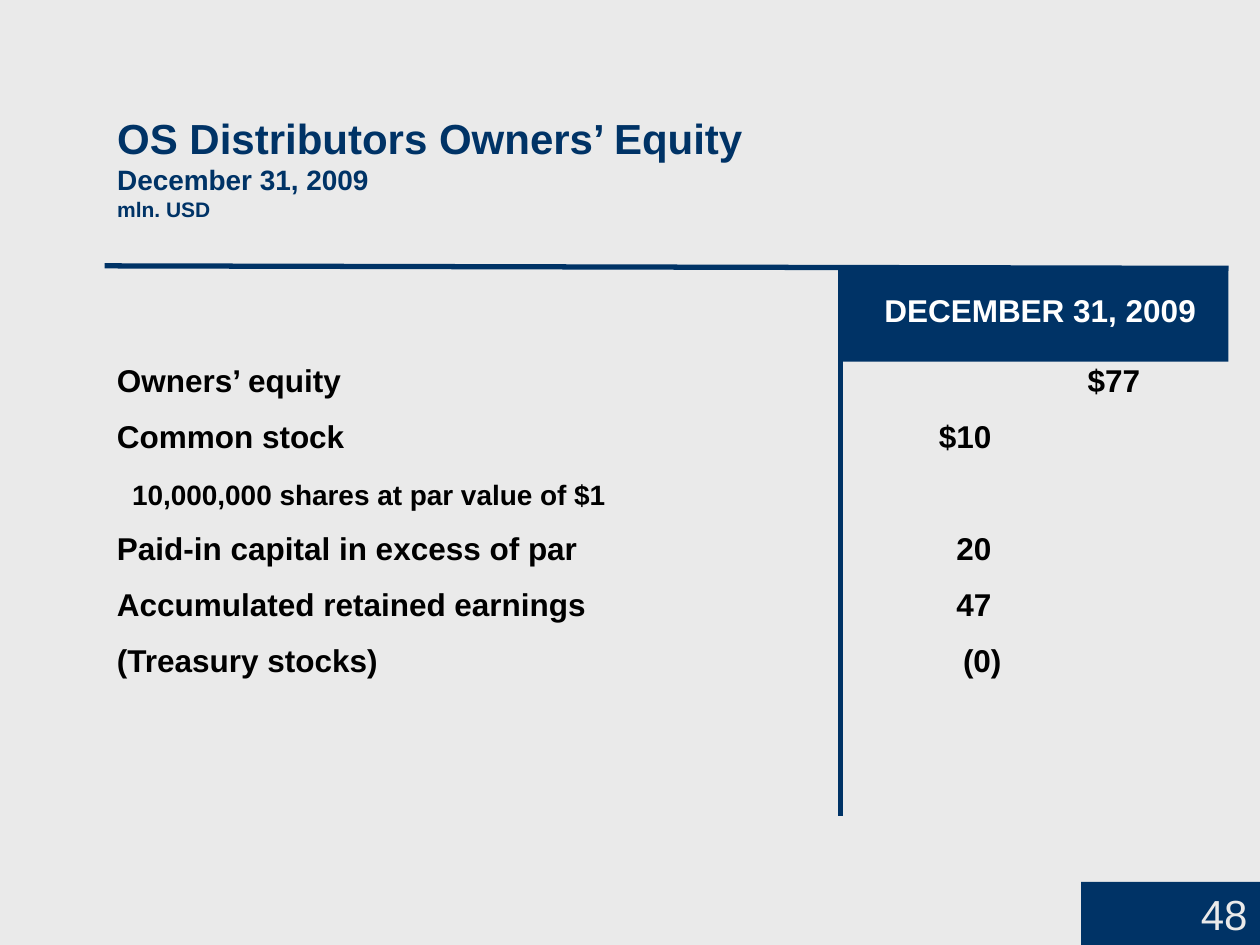
from lxml import etree
from pptx import Presentation
from pptx.dml.color import RGBColor
from pptx.enum.shapes import MSO_CONNECTOR, MSO_SHAPE
from pptx.enum.text import MSO_ANCHOR, MSO_AUTO_SIZE, PP_ALIGN
from pptx.oxml.ns import qn
from pptx.util import Inches, Pt

STRAIGHT = MSO_CONNECTOR.STRAIGHT
RECTANGLE = MSO_SHAPE.RECTANGLE
BOTTOM = MSO_ANCHOR.BOTTOM
LEFT, RIGHT = PP_ALIGN.LEFT, PP_ALIGN.RIGHT
NO_AUTOFIT = MSO_AUTO_SIZE.NONE
NAVY, GREY, BLACK, WHITE = "003366", "EAEAEA", "000000", "FFFFFF"


def color(hex_value):
    return RGBColor.from_string(hex_value)


def add_run(paragraph, text, size, hex_value, bold=True):
    run = paragraph.add_run()
    run.text = text
    run.font.name = "Arial"
    run.font.size = Pt(size)
    run.font.bold = bold
    run.font.color.rgb = color(hex_value)


presentation = Presentation()
presentation.slide_width = Inches(10)
presentation.slide_height = Inches(7.5)
slide = presentation.slides.add_slide(presentation.slide_layouts[5])
slide.background.fill.solid()
slide.background.fill.fore_color.rgb = color(GREY)

# Title with date and unit
title = slide.shapes.title
title.left, title.top = Inches(0.83), Inches(0.83)
title.width, title.height = Inches(8.93), Inches(0.98)
title.text_frame.vertical_anchor = BOTTOM
title.text_frame.auto_size = NO_AUTOFIT
paragraph = title.text_frame.paragraphs[0]
paragraph.alignment = LEFT
add_run(paragraph, "OS Distributors Owners’ Equity", 24, NAVY)
for text, size in [("December 31, 2009", 16), ("mln. USD", 12)]:
    paragraph.add_line_break()
    add_run(paragraph, text, size, NAVY)

# Navy blocks: page number and column header
blocks = []
for left, top, width, height in [(8.58, 7, 1.42, 0.5), (6.67, 2.13, 3.08, 0.74)]:
    block = slide.shapes.add_shape(
        RECTANGLE, Inches(left), Inches(top), Inches(width), Inches(height))
    block.shadow.inherit = False
    block.fill.solid()
    block.fill.fore_color.rgb = color(NAVY)
    block.line.fill.background()
    blocks.append(block)
page_frame = blocks[0].text_frame
page_frame.vertical_anchor = BOTTOM
page_frame.paragraphs[0].alignment = RIGHT
add_run(page_frame.paragraphs[0], "48", 24, GREY, bold=False)

# Statement rows: label, amount, tab position, tab alignment
rows = [
    ("", "DECEMBER 31, 2009", 6.09, "l"),
    ("Owners’ equity", "$77", 8.12, "r"),
    ("Common stock", "$10", 6.94, "r"),
    ("10,000,000 shares at par value of $1", "", None, None),
    ("Paid-in capital in excess of par", "20", 6.94, "r"),
    ("Accumulated retained earnings", "47", 6.94, "r"),
    ("(Treasury stocks)", "(0)", 7.02, "r"),
]
statement = slide.shapes.add_textbox(
    Inches(0.83), Inches(2.16), Inches(8.92), Inches(3.78))
frame = statement.text_frame
frame.word_wrap = True
for index, (label, amount, position, alignment) in enumerate(rows):
    is_header = index == 0
    paragraph = frame.paragraphs[0] if is_header else frame.add_paragraph()
    paragraph.line_spacing = Pt(29 if is_header else 24)
    paragraph.space_after = Pt(16 if is_header else 8)
    properties = paragraph._p.get_or_add_pPr()
    if amount:
        tab_list = etree.SubElement(properties, qn("a:tabLst"))
        etree.SubElement(tab_list, qn("a:tab"),
                         pos=str(Inches(position)), algn=alignment)
        add_run(paragraph, label + "\t", 18, BLACK)
        add_run(paragraph, amount, 18, WHITE if is_header else BLACK)
    else:
        # Detail line, slightly indented
        properties.set("marL", str(Inches(0.12)))
        properties.set("indent", "0")
        add_run(paragraph, label, 16, BLACK)

# Column divider and header rule
for x1, y1, x2, y2 in [(6.67, 2.13, 6.67, 6.48), (0.83, 2.11, 9.75, 2.13)]:
    rule = slide.shapes.add_connector(
        STRAIGHT, Inches(x1), Inches(y1), Inches(x2), Inches(y2))
    rule.line.color.rgb = color(NAVY)
    rule.line.width = Pt(3)
    etree.SubElement(rule._element.spPr, qn("a:effectLst"))

presentation.save("out.pptx")
